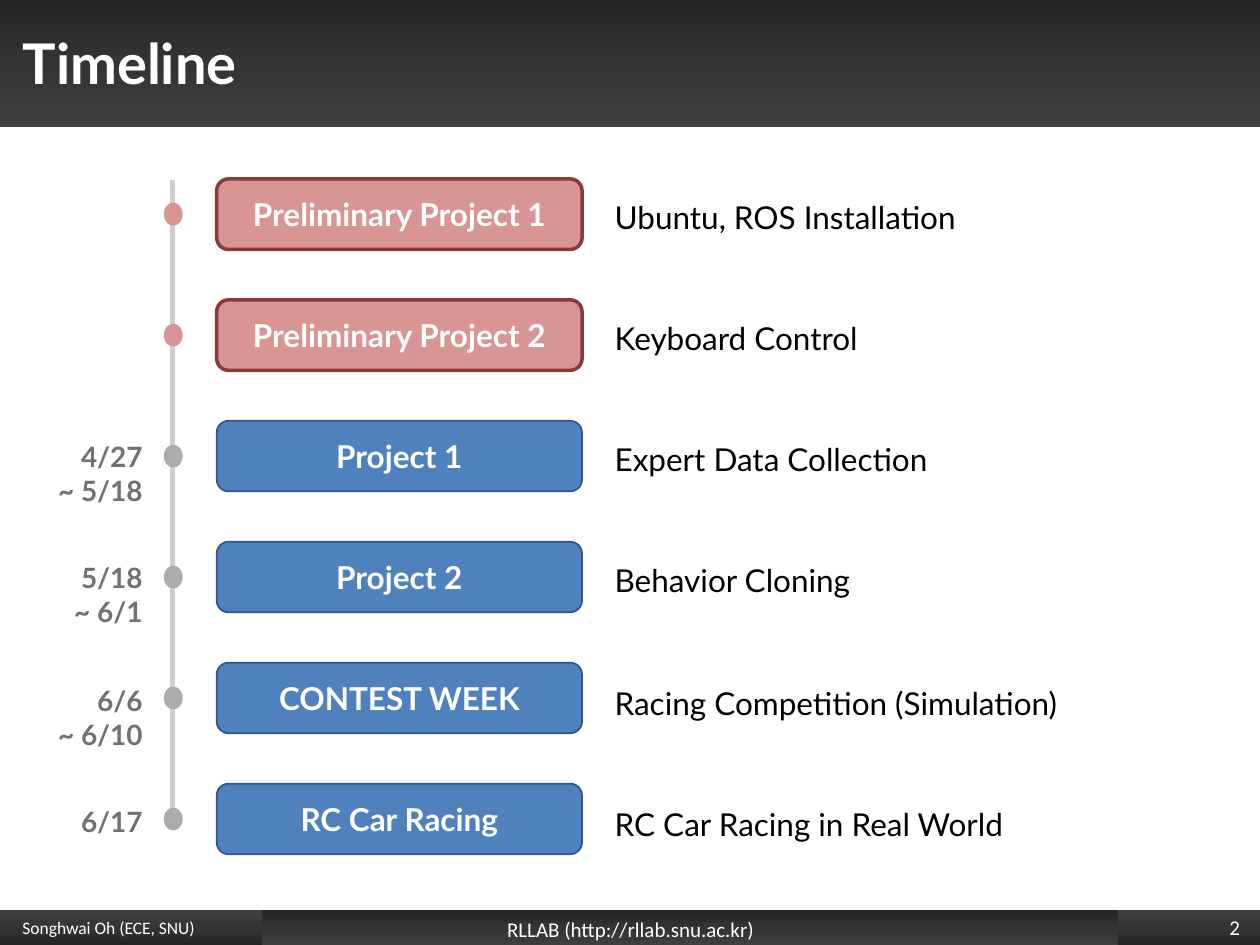
"""Build the course project timeline slide."""
from copy import deepcopy

from lxml import etree
from pptx import Presentation
from pptx.dml.color import RGBColor
from pptx.enum import shapes, text
from pptx.oxml import ns
from pptx.util import Inches, Pt

COLORS = {
    "white": "FFFFFF", "black": "000000", "date": "757070", "axis": "D0CECE",
    "prelim": "D99593", "prelim_edge": "8C3A38",
    "project": "4F81BD", "project_edge": "31538F", "project_dot": "AEABAB",
}
BAR_STOPS = ((0, "242424"), (0.5, "343434"), (1, "3F3F3F"))
STYLES = {
    "prelim": ("prelim", "prelim_edge", 2, "prelim"),
    "project": ("project", "project_edge", 1, "project_dot"),
}
MILESTONES = [
    ("prelim", "Preliminary Project 1", "", "Ubuntu, ROS Installation", 0.1),
    ("prelim", "Preliminary Project 2", "", "Keyboard Control", 0.1),
    ("project", "Project 1", "4/27\n~ 5/18", "Expert Data Collection", 0.1),
    ("project", "Project 2", "5/18\n~ 6/1", "Behavior Cloning", 0.1),
    ("project", "CONTEST WEEK", "6/6\n~ 6/10", "Racing Competition (Simulation)", 0.12),
    ("project", "RC Car Racing", "6/17", "RC Car Racing in Real World", 0.12),
]
FIRST_TOP, ROW_STEP = 1.42, 0.96
LEFT, CENTER, RIGHT = text.PP_ALIGN.LEFT, text.PP_ALIGN.CENTER, text.PP_ALIGN.RIGHT
MIDDLE, TOP = text.MSO_ANCHOR.MIDDLE, text.MSO_ANCHOR.TOP


def rgb(name):
    return RGBColor.from_string(COLORS[name])


def box(left, top, width, height):
    return Inches(left), Inches(top), Inches(width), Inches(height)


def write(holder, words, size, color="white", align=LEFT, bold=False, font="Lato", anchor=MIDDLE):
    frame = holder.text_frame
    frame.word_wrap = True
    frame.vertical_anchor = anchor
    frame.text = words
    for paragraph in frame.paragraphs:
        paragraph.alignment = align
        paragraph.font.size = Pt(size)
        paragraph.font.bold = bold
        paragraph.font.name = font
        paragraph.font.color.rgb = rgb(color)


def add_label(slide, place, words, size, **look):
    write(slide.shapes.add_textbox(*box(*place)), words, size, **look)


def add_shape(slide, kind, place):
    shape = slide.shapes.add_shape(kind, *box(*place))
    shape.shadow.inherit = False
    shape.line.fill.background()
    return shape


def add_bar(slide, place, angle):
    bar = add_shape(slide, shapes.MSO_SHAPE.RECTANGLE, place)
    bar.fill.gradient()
    bar.fill.gradient_angle = angle
    stop_list = bar._element.spPr.find(".//" + ns.qn("a:gsLst"))
    stop_list.insert(1, deepcopy(stop_list[0]))
    for stop, (position, shade) in zip(bar.fill.gradient_stops, BAR_STOPS):
        stop.position = position
        stop.color.rgb = RGBColor.from_string(shade)


def add_axis(slide, x, top, bottom):
    axis = slide.shapes.add_connector(
        shapes.MSO_CONNECTOR.STRAIGHT, Inches(x), Inches(top), Inches(x), Inches(bottom))
    axis.line.color.rgb = rgb("axis")
    axis.line.width = Pt(3)
    etree.SubElement(axis._element.spPr, ns.qn("a:effectLst"))


def add_milestone(slide, top, style, name, dates, description, text_offset):
    fill, edge, edge_width, dot_color = STYLES[style]
    dot = add_shape(slide, shapes.MSO_SHAPE.OVAL, (1.3, top + 0.19, 0.15, 0.18))
    dot.fill.solid()
    dot.fill.fore_color.rgb = rgb(dot_color)

    stage = add_shape(slide, shapes.MSO_SHAPE.ROUNDED_RECTANGLE, (1.72, top, 2.9, 0.56))
    stage.fill.solid()
    stage.fill.fore_color.rgb = rgb(fill)
    stage.line.color.rgb = rgb(edge)
    stage.line.width = Pt(edge_width)
    write(stage, name, 18, align=CENTER, bold=True)

    text_top = top + text_offset
    if dates:
        height = 0.64 if "\n" in dates else 0.37
        add_label(slide, (0.08, text_top, 1.15, height), dates, 16,
                  color="date", align=RIGHT, bold=True, anchor=TOP)
    add_label(slide, (4.78, text_top, 4.84, 0.4), description, 18, color="black", anchor=TOP)


def add_frame(slide):
    add_bar(slide, (0, 0, 10, 1.01), 270)
    add_bar(slide, (0, 7.22, 10, 0.29), 90)
    add_bar(slide, (2.08, 7.22, 6.79, 0.29), 270)
    title = slide.shapes.title
    title.left, title.top, title.width, title.height = box(0.08, 0.08, 8.25, 0.83)
    write(title, "Timeline", 32, bold=True)
    slide.shapes._spTree.append(title._element)
    add_label(slide, (9, 7.22, 0.94, 0.28), "2", 12, align=RIGHT, font="Calibri")
    add_label(slide, (2.17, 7.25, 5.67, 0.25), "RLLAB (http://rllab.snu.ac.kr)", 12,
              align=CENTER, font="Calibri")
    add_label(slide, (0.08, 7.23, 1.92, 0.27), "Songhwai Oh (ECE, SNU)", 10, font="Calibri")


def main():
    deck = Presentation()
    deck.slide_width, deck.slide_height = Inches(10), Inches(7.5)
    slide = deck.slides.add_slide(deck.slide_layouts[5])
    add_frame(slide)
    add_axis(slide, 1.37, 1.43, 6.42)
    for row, milestone in enumerate(MILESTONES):
        add_milestone(slide, FIRST_TOP + row * ROW_STEP, *milestone)
    deck.save("out.pptx")


if __name__ == "__main__":
    main()
